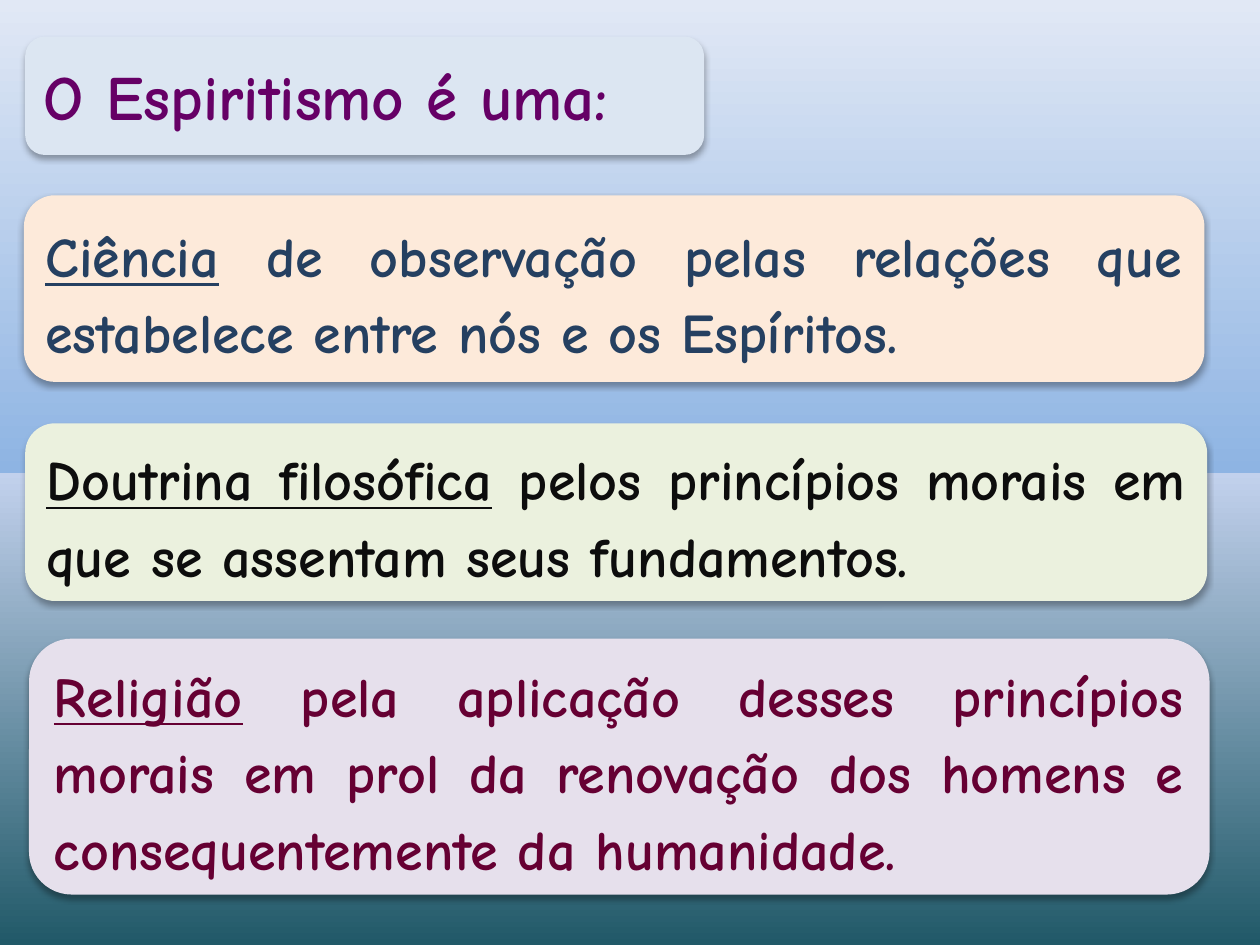
"""Build a slide that defines Spiritism in three coloured statement boxes."""
from dataclasses import dataclass

from lxml import etree
from pptx import Presentation
from pptx import util as u
from pptx.dml.color import RGBColor
from pptx.enum import shapes, text
from pptx.oxml.ns import qn

COLORS = {
    "title_box": "DCE6F2", "title": "660066",
    "science_box": "FDEADA", "science": "254061",
    "doctrine_box": "EBF1DE", "doctrine": "0D0D0D",
    "religion_box": "E6E0EC", "religion": "660033",
    "shadow": "000000",
    "deep": "215968", "mist": "C2D1ED", "sky": "8EB4E3", "haze": "E1E8F5",
}
BACKGROUND = [(0, "deep"), (50, "mist"), (50, "sky"), (100, "haze")]
FONT = {"name": "Comic Neue", "bold": True}
FRAME = {
    "word_wrap": True,
    "auto_size": text.MSO_AUTO_SIZE.NONE,
    "vertical_anchor": text.MSO_ANCHOR.MIDDLE,
}
JUSTIFIED = {"alignment": text.PP_ALIGN.JUSTIFY, "line_spacing": 1.14}
LEFT = {"alignment": text.PP_ALIGN.LEFT}


@dataclass
class Box:
    """A rounded box, with lengths in points."""
    role: str
    left: float
    top: float
    width: float
    height: float
    term: str = ""
    rest: str = ""


TITLE = Box("title", 14.4, 20.9, 388, 67.7, rest="O Espiritismo é uma:")
STATEMENTS = [
    Box("science", 13.7, 111.6, 674.6, 106.6, "Ciência",
        " de observação pelas relações que estabelece entre nós e os Espíritos."),
    Box("doctrine", 14.4, 241.9, 675.4, 101.5, "Doutrina filosófica",
        " pelos princípios morais em que se assentam seus fundamentos."),
    Box("religion", 16.6, 365, 674.6, 146.2, "Religião",
        " pela aplicação desses princípios morais em prol da renovação"
        " dos homens e consequentemente da humanidade."),
]


def apply(target, values: dict) -> None:
    """Set each named attribute on the target."""
    for name, value in values.items():
        setattr(target, name, value)


def add_color(parent, name: str, alpha: int = 100) -> None:
    """Append a colour element to an XML parent."""
    color = etree.SubElement(parent, qn("a:srgbClr"), val=COLORS[name])
    if alpha < 100:
        etree.SubElement(color, qn("a:alpha"), val=str(alpha * 1000))


def paint_background(s) -> None:
    """Fill the slide background with the two-part gradient."""
    fill = s.background.fill
    fill.gradient()
    fill.gradient_angle = 90
    stops = next(s.element.iter(qn("a:gsLst")))
    for stop in list(stops):
        stops.remove(stop)
    for position, name in BACKGROUND:
        add_color(etree.SubElement(stops, qn("a:gs"), pos=str(position * 1000)), name)


def add_box(s, box: Box):
    """Draw a rounded box with a soft shadow below it."""
    sp = s.shapes.add_shape(
        shapes.MSO_SHAPE.ROUNDED_RECTANGLE,
        *map(u.Pt, (box.left, box.top, box.width, box.height)))
    sp.fill.solid()
    sp.fill.fore_color.rgb = RGBColor.from_string(COLORS[f"{box.role}_box"])
    sp.line.fill.background()
    sp.shadow.inherit = False
    shadow = etree.SubElement(
        sp.element.spPr.find(qn("a:effectLst")), qn("a:outerShdw"),
        blurRad=str(u.Pt(3.5)), dist=str(u.Pt(2.2)), dir="5400000", rotWithShape="0")
    add_color(shadow, "shadow", 32)
    return sp


def write(sp, box: Box, size: float, layout: dict) -> None:
    """Write the box's wording, with its term underlined."""
    tf = sp.text_frame
    apply(tf, FRAME)
    p = tf.paragraphs[0]
    apply(p, layout)
    for wording, underline in ((box.term, True), (box.rest, False)):
        if wording:
            r = p.add_run()
            r.text = wording
            apply(r.font, {**FONT, "size": u.Pt(size), "underline": underline})
            r.font.color.rgb = RGBColor.from_string(COLORS[box.role])


def add_title(s, box: Box) -> None:
    """Set the title placeholder on a rounded box, clear of its corners."""
    title = s.shapes.title
    panel = add_box(s, box)
    title.element.addprevious(panel.element)
    corner = 3.3
    apply(title, {
        "left": u.Pt(box.left + corner), "top": u.Pt(box.top),
        "width": u.Pt(box.width - 2 * corner), "height": u.Pt(box.height),
    })
    write(title, box, 36, LEFT)


def main() -> None:
    """Build and save the slide."""
    prs = Presentation()
    apply(prs, {"slide_width": u.Pt(720), "slide_height": u.Pt(540)})
    s = prs.slides.add_slide(prs.slide_layouts.get_by_name("Title Only"))
    paint_background(s)
    add_title(s, TITLE)
    for box in STATEMENTS:
        write(add_box(s, box), box, 32, JUSTIFIED)
    prs.save("out.pptx")


if __name__ == "__main__":
    main()
